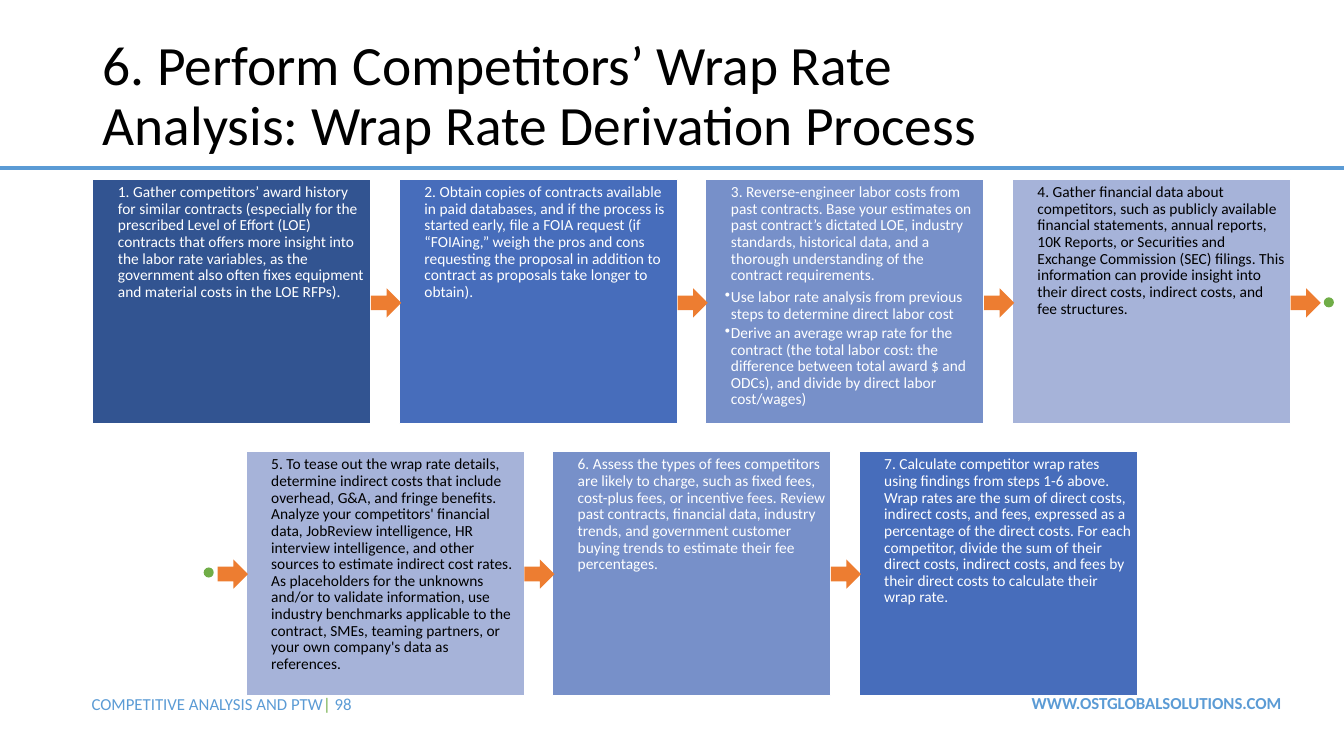
from lxml import etree
from pptx import Presentation
from pptx.dml.color import RGBColor
from pptx.enum.shapes import MSO_CONNECTOR as Link, MSO_SHAPE as Kind
from pptx.enum.text import MSO_ANCHOR as Anchor, PP_ALIGN as Align
from pptx.oxml.ns import qn
from pptx.util import Inches, Pt

WHITE, BLACK = "FFFFFF", "000000"
NAVY, ROYAL, STEEL, PALE = "325491", "476DBB", "7790C9", "A6B3D9"
SKY, GREEN, ORANGE = "5B9BD5", "70AD47", "ED7D31"


def paint(code):
    return RGBColor.from_string(code)


def write(frame, text, size=11, color=BLACK, bold=False, align=Align.LEFT,
          line=None, after=0, indent=0, hang=0, bullet=None, first=True):
    """Add one paragraph; text is a string or a list of (text, color) runs."""
    para = frame.paragraphs[0] if first else frame.add_paragraph()
    props = para._p.get_or_add_pPr()
    props.set("marL", str(Inches(indent)))
    props.set("indent", str(Inches(hang)))
    if bullet:
        etree.SubElement(props, qn("a:buChar")).set("char", bullet)
    para.alignment = align
    para.space_after = Pt(after)
    if line:
        para.line_spacing = line
    for words, tint in [(text, color)] if isinstance(text, str) else text:
        run = para.add_run()
        run.text = words
        run.font.name = "Calibri"
        run.font.size = Pt(size)
        run.font.bold = bold
        run.font.color.rgb = paint(tint)


class Board:
    box_w, box_h = 2.76, 2.42
    step = 3.04

    def __init__(self, slide):
        self.shapes = slide.shapes

    def rule(self, y, color, width):
        line = self.shapes.add_connector(
            Link.STRAIGHT, 0, Inches(y), Inches(13.33), Inches(y))
        line.line.color.rgb = paint(color)
        line.line.width = Pt(width)
        etree.SubElement(line._element.spPr, qn("a:effectLst"))

    def label(self, x, y, w, h, text, anchor=Anchor.TOP, **style):
        frame = self.shapes.add_textbox(
            Inches(x), Inches(y), Inches(w), Inches(h)).text_frame
        frame.word_wrap = True
        frame.vertical_anchor = anchor
        write(frame, text, **style)

    def shape(self, kind, x, y, w, h, fill, edge=None):
        item = self.shapes.add_shape(
            kind, Inches(x), Inches(y), Inches(w), Inches(h))
        item.shadow.inherit = False
        item.fill.solid()
        item.fill.fore_color.rgb = paint(fill)
        if edge:
            item.line.color.rgb = paint(edge)
            item.line.width = Pt(1)
        else:
            item.line.fill.background()
        return item

    def card(self, x, y, fill, text, points=()):
        frame = self.shape(Kind.RECTANGLE, x, y, self.box_w, self.box_h,
                           fill, WHITE).text_frame
        frame.word_wrap = True
        frame.vertical_anchor = Anchor.TOP
        frame.margin_left = frame.margin_right = Inches(0.05)
        frame.margin_top = frame.margin_bottom = Inches(0.05)
        style = dict(color=BLACK if fill == PALE else WHITE,
                     line=0.9, indent=0.2)
        write(frame, text, after=3.85, **style)
        for point in points:
            write(frame, point, after=1.65, hang=-0.06, bullet="•",
                  first=False, **style)

    def row(self, x, y, cards):
        for i, card in enumerate(cards):
            self.card(x + i * self.step, y, *card)

    def arrows(self, x, y, count):
        for i in range(count):
            self.shape(Kind.RIGHT_ARROW, x + i * self.step, y, 0.3, 0.29,
                       ORANGE)

    def dot(self, x, y):
        self.shape(Kind.OVAL, x, y, 0.1, 0.1, GREEN)


TOP = [
    (NAVY, "1. Gather competitors’ award history for similar contracts "
     "(especially for the prescribed Level of Effort (LOE) contracts that "
     "offers more insight into the labor rate variables, as the government "
     "also often fixes equipment and material costs in the LOE RFPs)."),
    (ROYAL, "2. Obtain copies of contracts available in paid databases, and "
     "if the process is started early, file a FOIA request (if “FOIAing,” "
     "weigh the pros and cons requesting the proposal in addition to "
     "contract as proposals take longer to obtain)."),
    (STEEL, "3. Reverse-engineer labor costs from past contracts. Base your "
     "estimates on past contract’s dictated LOE, industry standards, "
     "historical data, and a thorough understanding of the contract "
     "requirements.",
     ["Use labor rate analysis from previous steps to determine direct "
      "labor cost",
      "Derive an average wrap rate for the contract (the total labor cost: "
      "the difference between total award $ and ODCs), and divide by direct "
      "labor cost/wages)"]),
    (PALE, "4. Gather financial data about competitors, such as publicly "
     "available financial statements, annual reports, 10K Reports, or "
     "Securities and Exchange Commission (SEC) filings. This information "
     "can provide insight into their direct costs, indirect costs, and fee "
     "structures."),
]
LOW = [
    (PALE, "5. To tease out the wrap rate details, determine indirect costs "
     "that include overhead, G&A, and fringe benefits. Analyze your "
     "competitors' financial data, JobReview intelligence, HR interview "
     "intelligence, and other sources to estimate indirect cost rates. As "
     "placeholders for the unknowns and/or to validate information, use "
     "industry benchmarks applicable to the contract, SMEs, teaming "
     "partners, or your own company's data as references."),
    (STEEL, "6. Assess the types of fees competitors are likely to charge, "
     "such as fixed fees, cost-plus fees, or incentive fees. Review past "
     "contracts, financial data, industry trends, and government customer "
     "buying trends to estimate their fee percentages."),
    (ROYAL, "7. Calculate competitor wrap rates using findings from steps "
     "1-6 above. Wrap rates are the sum of direct costs, indirect costs, "
     "and fees, expressed as a percentage of the direct costs. For each "
     "competitor, divide the sum of their direct costs, indirect costs, and "
     "fees by their direct costs to calculate their wrap rate."),
]


def main():
    deck = Presentation()
    deck.slide_width, deck.slide_height = Inches(13.33), Inches(7.5)
    board = Board(deck.slides.add_slide(deck.slide_layouts[6]))

    # Rule, footer and title
    board.rule(1.67, SKY, 3)
    board.label(9.39, 6.82, 3.42, 0.3, "WWW.OSTGLOBALSOLUTIONS.COM",
                size=12, color=SKY, bold=True, align=Align.RIGHT)
    board.label(0.81, 6.83, 4.82, 0.3,
                [("COMPETITIVE ANALYSIS AND PTW", SKY), ("| ", GREEN),
                 ("98", SKY)], size=12)
    board.label(0.92, 0.4, 8.99, 1.14,
                "6. Perform Competitors’ Wrap Rate Analysis: "
                "Wrap Rate Derivation Process",
                anchor=Anchor.MIDDLE, size=39.6, line=0.9)

    # Steps
    board.row(0.92, 1.78, TOP)
    board.row(2.44, 4.48, LOW)

    # Arrows, with dots where the flow breaks between rows
    board.arrows(3.68, 2.86, 4)
    board.arrows(2.16, 5.55, 3)
    board.dot(13.13, 2.95)
    board.dot(2.02, 5.63)

    deck.save("out.pptx")


if __name__ == "__main__":
    main()
